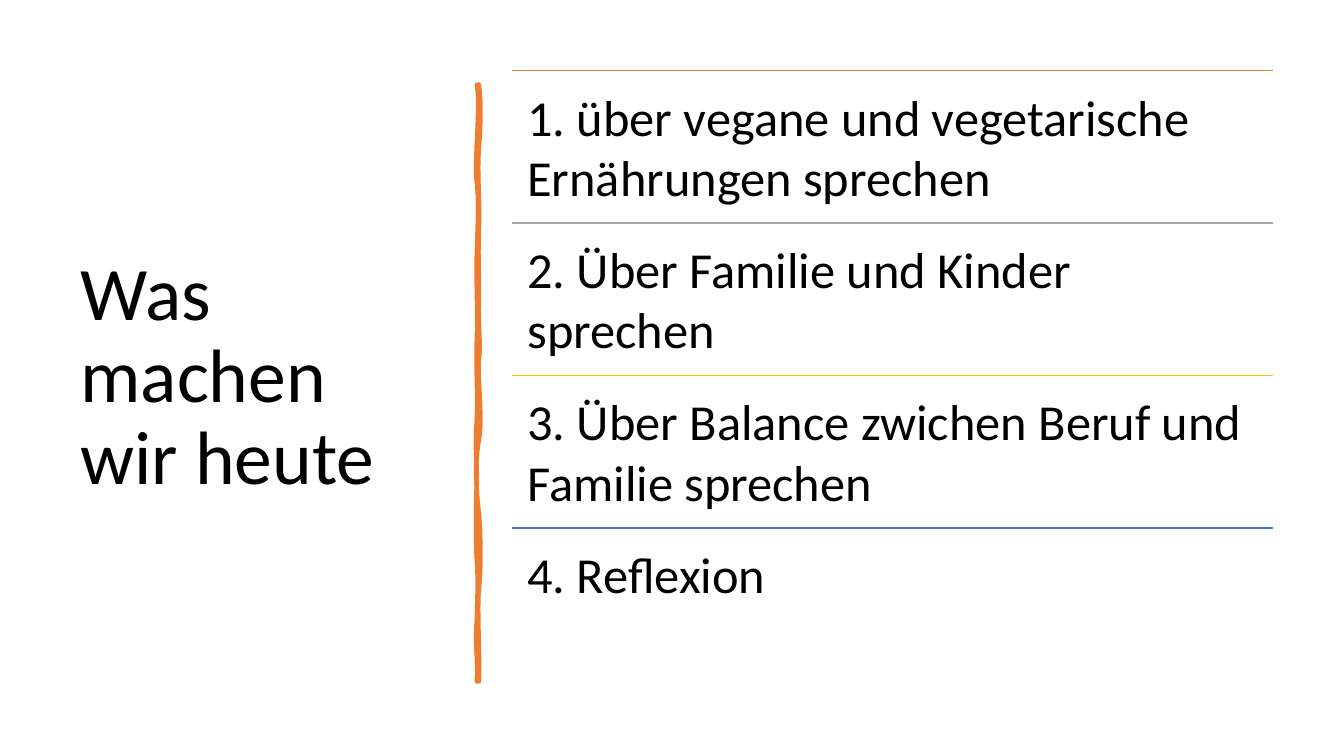
from lxml import etree
from pptx import Presentation
from pptx.dml.color import RGBColor
from pptx.enum.shapes import MSO_CONNECTOR as Connector
from pptx.enum.text import MSO_ANCHOR as Anchor
from pptx.oxml.ns import qn
from pptx.util import Pt

PX = 9144
SLIDE_SIZE = (1333, 750)
FONT = "Calibri"
COLORS = {
    "text": "000000",
    "orange": "ED7D31",
    "gray": "A5A5A5",
    "gold": "FFC000",
    "blue": "4472C4",
}

TITLE = "Was machen wir heute"
TITLE_BOX = (70, 70, 374, 610)
AGENDA = [
    ("1. über vegane und vegetarische Ernährungen sprechen", "orange"),
    ("2. Über Familie und Kinder sprechen", "gray"),
    ("3. Über Balance zwichen Beruf und Familie sprechen", "gold"),
    ("4. Reflexion", "blue"),
]
AGENDA_BOX = (508, 70, 755, 605)

BRUSH_START = (475, 84)
BRUSH_CURVES = [
    ((477, 102), (477, 119), (475, 146)),
    ((473, 173), (476, 195), (475, 226)),
    ((474, 257), (475, 262), (475, 294)),
    ((474, 325), (477, 342), (475, 356)),
    ((473, 370), (479, 414), (475, 436)),
    ((471, 457), (472, 484), (475, 510)),
    ((477, 536), (477, 564), (475, 584)),
    ((473, 603), (476, 650), (475, 676)),
    ((474, 676), (473, 676), (473, 676)),
    ((474, 646), (471, 644), (473, 613)),
    ((474, 583), (474, 570), (473, 557)),
    ((472, 544), (472, 495), (473, 477)),
    ((473, 459), (471, 445), (473, 415)),
    ((474, 386), (472, 373), (473, 335)),
    ((474, 298), (472, 281), (473, 250)),
    ((474, 218), (475, 200), (473, 181)),
    ((470, 163), (477, 104), (473, 84)),
    ((474, 84), (474, 84), (475, 84)),
]


def color(name):
    return RGBColor.from_string(COLORS[name])


def add_text(slide, box, text, size, anchor, inset, spacing):
    shape = slide.shapes.add_textbox(*(round(value * PX) for value in box))
    frame = shape.text_frame
    frame.text = text
    frame.word_wrap = True
    frame.vertical_anchor = anchor
    frame.margin_left = frame.margin_right = inset * PX
    frame.margin_top = frame.margin_bottom = inset * PX
    paragraph = frame.paragraphs[0]
    paragraph.line_spacing = spacing
    font = paragraph.runs[0].font
    font.name = FONT
    font.size = Pt(size)
    font.color.rgb = color("text")


def add_rule(slide, left, top, width, color_name):
    ends = (left, top, left + width, top)
    rule = slide.shapes.add_connector(
        Connector.STRAIGHT, *(round(value * PX) for value in ends))
    rule.line.color.rgb = color(color_name)
    rule.line.width = Pt(1)
    etree.SubElement(rule.element.spPr, qn("a:effectLst"))


def bend_segments(shape, curves):
    left, top = shape.left // PX, shape.top // PX
    segments = list(shape.element.spPr.iter(qn("a:lnTo")))
    for segment, curve in zip(segments, curves):
        bend = etree.Element(qn("a:cubicBezTo"))
        for x, y in curve:
            etree.SubElement(bend, qn("a:pt"), x=str(x - left), y=str(y - top))
        segment.getparent().replace(segment, bend)


def add_brush(slide):
    builder = slide.shapes.build_freeform(*BRUSH_START, scale=PX)
    builder.add_line_segments([curve[-1] for curve in BRUSH_CURVES], close=True)
    brush = builder.convert_to_shape()
    bend_segments(brush, BRUSH_CURVES)
    brush.shadow.inherit = False
    brush.fill.solid()
    brush.fill.fore_color.rgb = color("orange")
    brush.line.color.rgb = color("orange")
    brush.line.width = Pt(3.25)


def main():
    presentation = Presentation()
    presentation.slide_width, presentation.slide_height = (
        value * PX for value in SLIDE_SIZE)
    slide = presentation.slides.add_slide(presentation.slide_layouts[6])

    add_text(slide, TITLE_BOX, TITLE, 54, Anchor.MIDDLE, 10, 0.9)
    add_brush(slide)

    left, top, width, height = AGENDA_BOX
    row_height = height / len(AGENDA)
    for index, (text, color_name) in enumerate(AGENDA):
        row_top = top + index * row_height
        add_rule(slide, left, row_top, width, color_name)
        add_text(slide, (left, row_top, width, row_height), text, 36,
                 Anchor.TOP, 15, 1.0)

    presentation.save("out.pptx")


if __name__ == "__main__":
    main()
